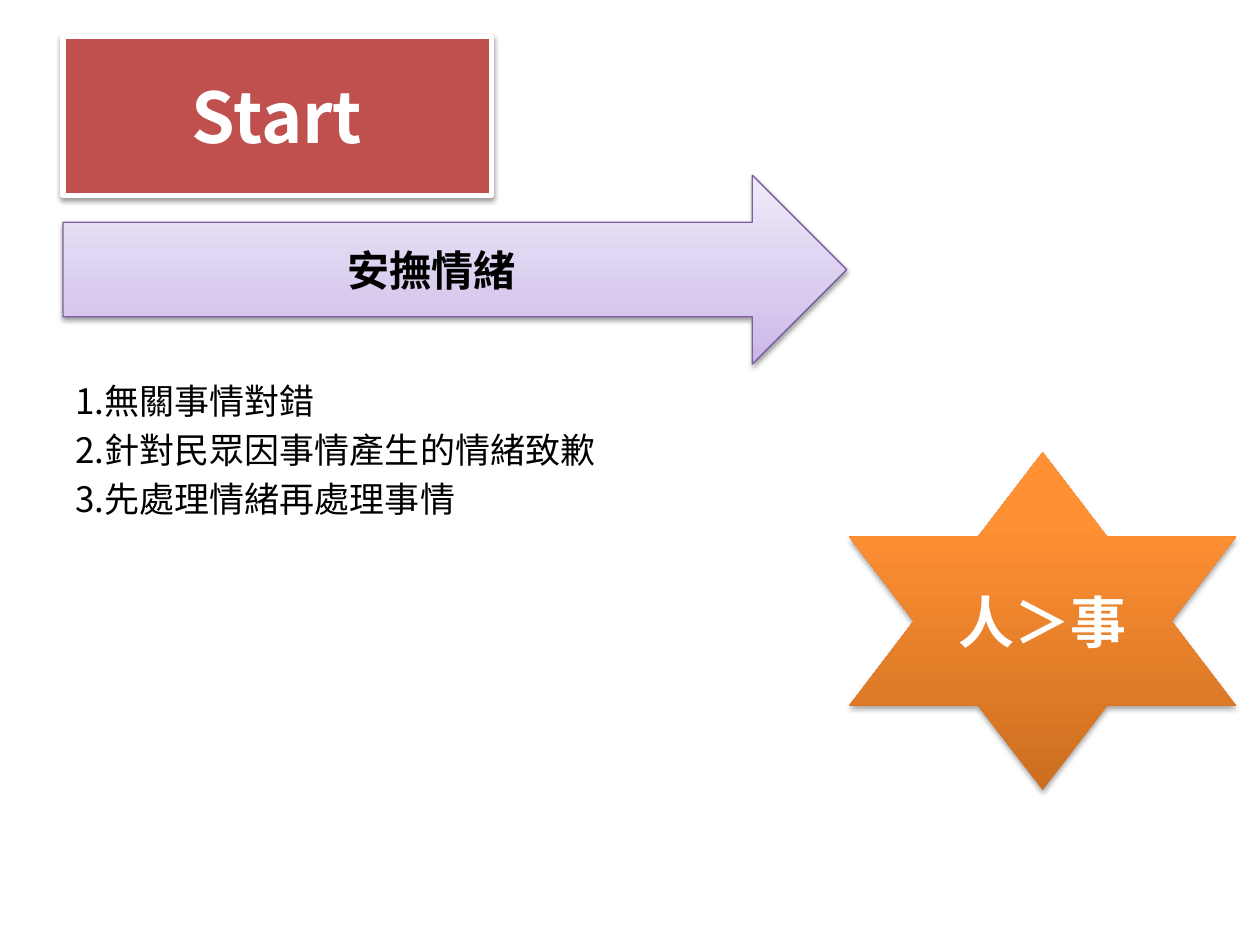
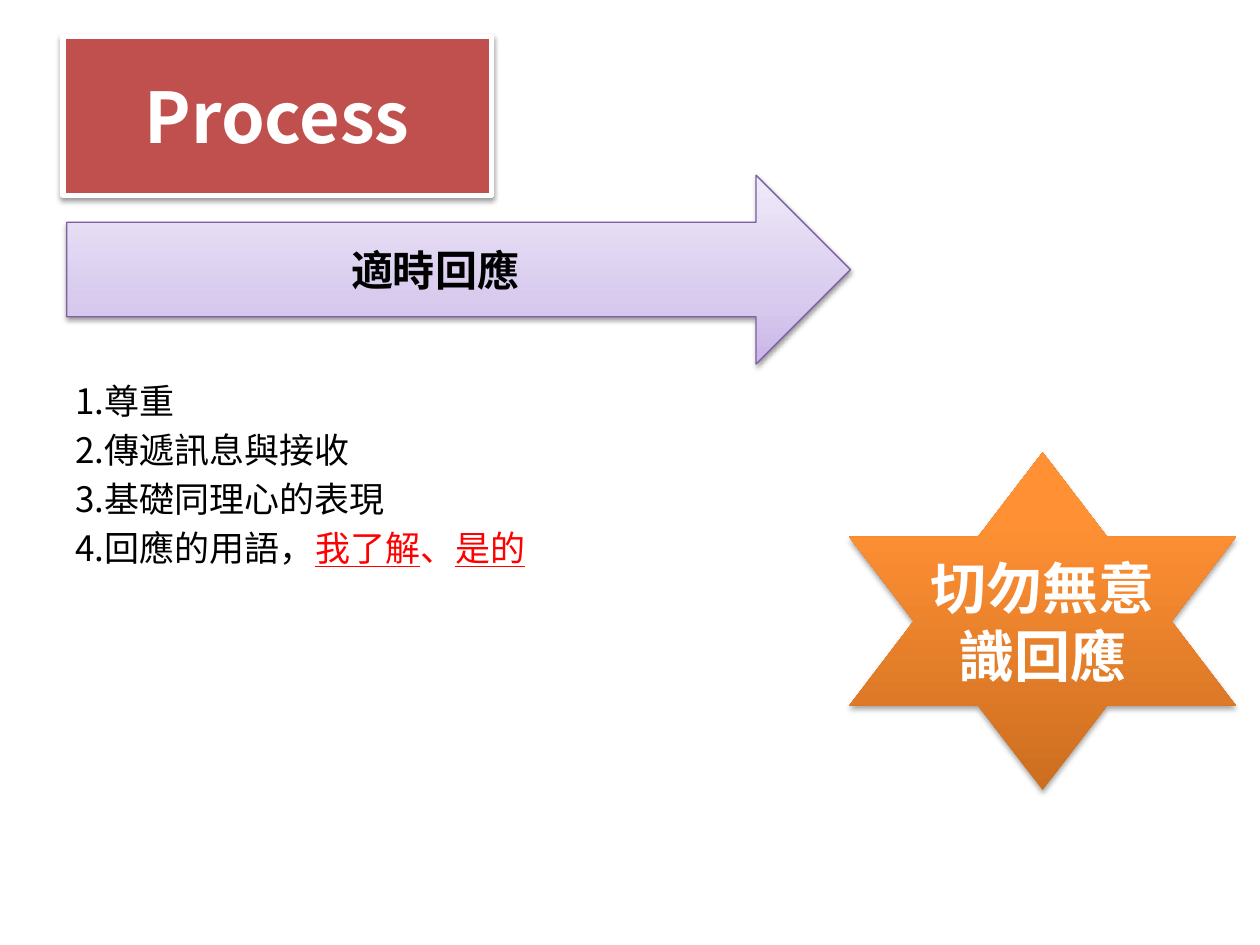
from lxml import etree
from pptx import Presentation
from pptx import util as u
from pptx.dml.color import RGBColor
from pptx.enum import shapes, text
from pptx.oxml import ns

FONT = "Noto Sans CJK SC"
BLACK = RGBColor(0x00, 0x00, 0x00)
WHITE = RGBColor(0xFF, 0xFF, 0xFF)
RED = RGBColor(0xFF, 0x00, 0x00)
TITLE_RED = RGBColor(0xC0, 0x50, 0x4D)
ARROW_LINE = RGBColor(0x7D, 0x60, 0xA0)
ARROW_STOPS = [
    (0, RGBColor(0xC9, 0xB5, 0xE8)),
    (35, RGBColor(0xD8, 0xCB, 0xEE)),
    (100, RGBColor(0xF0, 0xEA, 0xF9)),
]
STAR_STOPS = [
    (0, RGBColor(0xCC, 0x6E, 0x20)),
    (80, RGBColor(0xFF, 0x90, 0x34)),
    (100, RGBColor(0xFF, 0x91, 0x36)),
]

TITLE_FORMAT = {"size": u.Pt(40), "bold": True}
ARROW_FORMAT = {"size": u.Pt(24), "bold": True}
STAR_FORMAT = {"size": u.Pt(32), "bold": True}
LIST_FORMAT = {"size": u.Pt(20), "bold": False}
UNDERLINED = {**LIST_FORMAT, "underline": True}

SLIDES = [
    {
        "title": "Start",
        "arrow": "安撫情緒",
        "arrow_left": 0.5,
        "star": "人＞事",
        "points": [
            [("1.無關事情對錯", BLACK, LIST_FORMAT)],
            [("2.針對民眾因事情產生的情緒致歉", BLACK, LIST_FORMAT)],
            [("3.先處理情緒再處理事情", BLACK, LIST_FORMAT)],
        ],
    },
    {
        "title": "Process",
        "arrow": "適時回應",
        "arrow_left": 0.53,
        "star": "切勿無意識回應",
        "points": [
            [("1.尊重", BLACK, LIST_FORMAT)],
            [("2.傳遞訊息與接收", BLACK, LIST_FORMAT)],
            [("3.基礎同理心的表現", BLACK, LIST_FORMAT)],
            [
                ("4.回應的用語，", BLACK, LIST_FORMAT),
                ("我了解", RED, UNDERLINED),
                ("、", RED, LIST_FORMAT),
                ("是的", RED, UNDERLINED),
            ],
        ],
    },
]


def add_run(paragraph, words, color, font_format):
    run = paragraph.add_run()
    run.text = words
    run.font.name = FONT
    run.font.color.rgb = color
    for name, value in font_format.items():
        setattr(run.font, name, value)
    properties = run._r.get_or_add_rPr()
    east_asian = etree.SubElement(properties, ns.qn("a:ea"))
    east_asian.set("typeface", FONT)


def add_shadow(shape, opacity, distance):
    shape.shadow.inherit = False
    effects = shape._element.spPr.find(ns.qn("a:effectLst"))
    shadow = etree.SubElement(
        effects, ns.qn("a:outerShdw"), blurRad=str(u.Pt(3.1)),
        dist=str(u.Pt(distance)), dir="5400000", rotWithShape="0",
    )
    color = etree.SubElement(shadow, ns.qn("a:srgbClr"), val=str(BLACK))
    etree.SubElement(color, ns.qn("a:alpha"), val=str(opacity * 1000))


presentation = Presentation()
presentation.slide_width = u.Inches(10)
presentation.slide_height = u.Inches(7.5)
title_only = presentation.slide_layouts[5]

for content in SLIDES:
    slide = presentation.slides.add_slide(title_only)

    title = slide.shapes.title
    title_place = {"left": 0.5, "top": 0.29, "width": 3.4, "height": 1.26}
    for name, value in title_place.items():
        setattr(title, name, u.Inches(value))
    title.fill.solid()
    title.fill.fore_color.rgb = TITLE_RED
    title.line.color.rgb = WHITE
    title.line.width = u.Pt(3)
    add_shadow(title, 38, 1.6)

    points = slide.shapes.add_textbox(
        u.Inches(0.5), u.Inches(2.96), u.Inches(6.1), u.Inches(3.74)
    )
    points.text_frame.word_wrap = True
    for index, runs in enumerate(content["points"]):
        if index == 0:
            paragraph = points.text_frame.paragraphs[0]
        else:
            paragraph = points.text_frame.add_paragraph()
            paragraph.space_before = u.Pt(4)
        for words, color, font_format in runs:
            add_run(paragraph, words, color, font_format)

    arrow = slide.shapes.add_shape(
        shapes.MSO_SHAPE.RIGHT_ARROW, u.Inches(content["arrow_left"]),
        u.Inches(1.39), u.Inches(6.22), u.Inches(1.5),
    )
    arrow.line.color.rgb = ARROW_LINE
    arrow.line.width = u.Pt(0.75)
    add_shadow(arrow, 38, 1.6)

    star = slide.shapes.add_shape(
        shapes.MSO_SHAPE.STAR_6_POINT, u.Inches(6.74),
        u.Inches(3.59), u.Inches(3.07), u.Inches(2.68),
    )
    star.line.fill.background()
    add_shadow(star, 35, 1.8)

    for shape, stops in [(arrow, ARROW_STOPS), (star, STAR_STOPS)]:
        shape.fill.gradient()
        shape.fill.gradient_angle = 90
        stop_list = shape._element.spPr.find(".//" + ns.qn("a:gsLst"))
        for old_stop in list(stop_list):
            stop_list.remove(old_stop)
        for position, color in stops:
            stop = etree.SubElement(stop_list, ns.qn("a:gs"), pos=str(position * 1000))
            etree.SubElement(stop, ns.qn("a:srgbClr"), val=str(color))

    for shape, words, color, font_format in [
        (title, content["title"], WHITE, TITLE_FORMAT),
        (arrow, content["arrow"], BLACK, ARROW_FORMAT),
        (star, content["star"], WHITE, STAR_FORMAT),
    ]:
        frame = shape.text_frame
        frame_format = {
            "word_wrap": True,
            "auto_size": text.MSO_AUTO_SIZE.NONE,
            "vertical_anchor": text.MSO_ANCHOR.MIDDLE,
        }
        for name, value in frame_format.items():
            setattr(frame, name, value)
        paragraph = frame.paragraphs[0]
        paragraph.alignment = text.PP_ALIGN.CENTER
        add_run(paragraph, words, color, font_format)

presentation.save("out.pptx")
